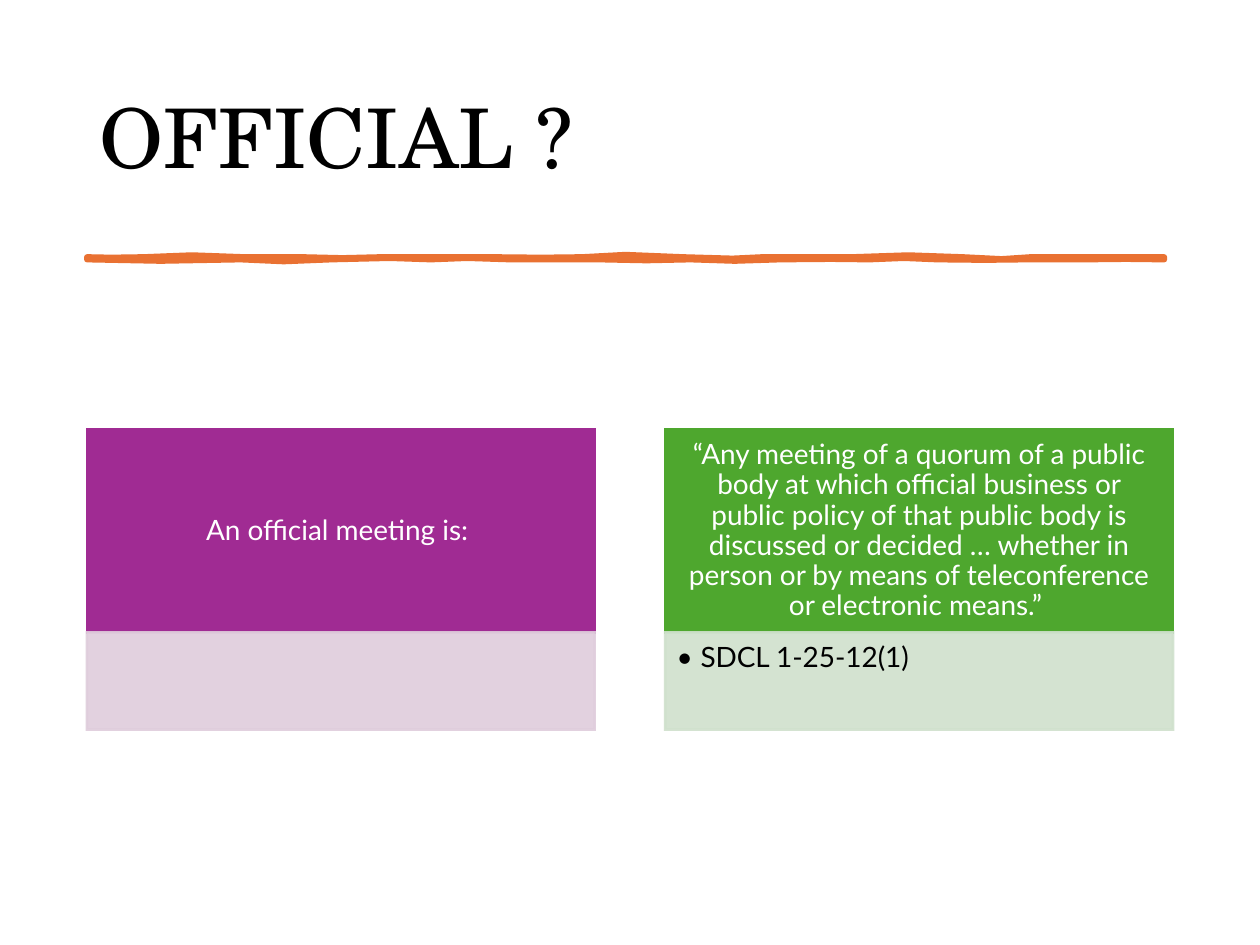
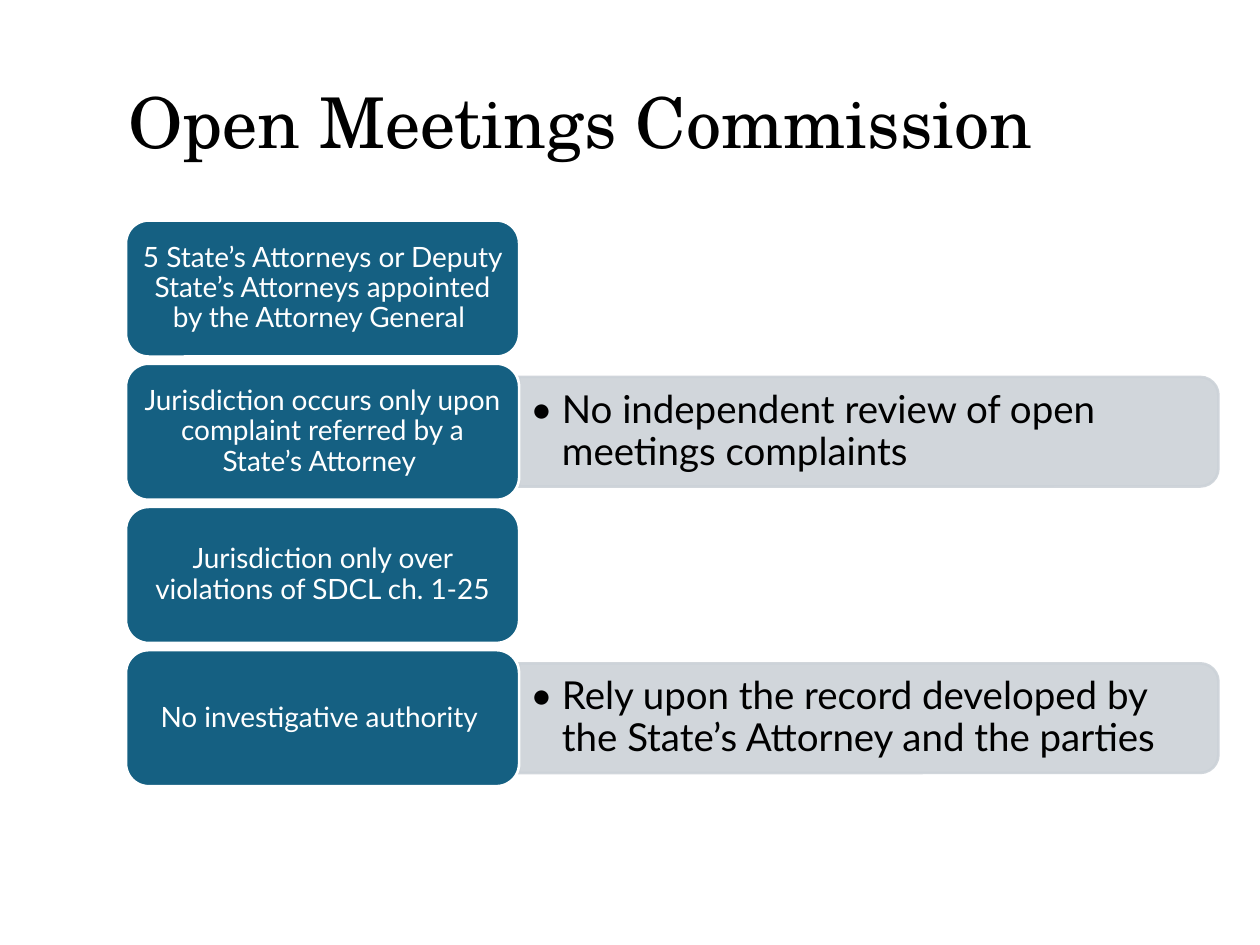
"""Build two slides on official meetings and the Open Meetings Commission."""
import dataclasses

import lxml.etree
import pptx
import pptx.dml.color
import pptx.enum.shapes
import pptx.enum.text
import pptx.oxml.ns
import pptx.util

Inches = pptx.util.Inches
MSO = pptx.enum.shapes.MSO_SHAPE
ALIGN = pptx.enum.text.PP_ALIGN
ANCHOR = pptx.enum.text.MSO_ANCHOR
qn = pptx.oxml.ns.qn


@dataclasses.dataclass(frozen=True)
class Theme:
    title_font: str = "TeX Gyre Schola"
    body_font: str = "Lato"
    text: str = "000000"
    light: str = "FFFFFF"
    rule: str = "E97132"
    topic: str = "156082"
    detail: str = "CCD2D8"
    body_size: int = 16
    detail_size: int = 22
    outline: float = 1.5
    rule_width: float = 3.25
    tint_alpha: int = 90
    spacing: float = 0.9


T = Theme()

OFFICIAL = {
    "title": ("OFFICIAL ?", (0.69, 0.4, 8.62, 1.45), 47),
    "panels": [
        ("An official meeting is: ", "", "A02B93", "DFCDDC"),
        ("“Any meeting of a quorum of a public body at which official business "
         "or public policy of that public body is discussed or decided … whether "
         "in person or by means of teleconference or electronic means.” ",
         "SDCL 1-25-12(1)", "4EA72E", "D0E1CD"),
    ],
}
COMMISSION = {
    "title": ("Open Meetings Commission", (0.92, 0.58, 8.67, 0.84), 40),
    "topics": [
        ("5 State’s Attorneys or Deputy State’s Attorneys appointed by the Attorney General ", ""),
        ("Jurisdiction occurs only upon complaint referred by a State’s Attorney ",
         "No independent review of open meetings complaints"),
        ("Jurisdiction only over violations of SDCL ch. 1-25", ""),
        ("No investigative authority ",
         "Rely upon the record developed by the State’s Attorney and the parties"),
    ],
}

RULE_START = (0.69, 2.04)
RULE_TOP = [
    (0.82, 2.03, 0.92, 2.06, 1.14), (1.37, 2.02, 1.66, 2.02, 1.94),
    (2.22, 2.05, 2.2, 2.03, 2.4), (2.6, 2.05, 2.84, 2.05, 3.02),
    (3.2, 2.03, 3.62, 2.05, 3.91), (4.2, 2.03, 4.42, 2.06, 4.62),
    (4.83, 2.02, 5.06, 2.01, 5.42), (5.77, 2.07, 5.91, 2.04, 6.05),
    (6.18, 2.04, 6.5, 2.04, 6.76), (7.01, 2.04, 7.41, 2.0, 7.64),
    (7.88, 2.08, 8.04, 2.04, 8.18), (8.32, 2.04, 8.78, 2.04, 9.24),
]
RULE_BOTTOM = [
    (9.11, 2.04, 8.77, 2.07, 8.61),
    (8.45, 2.05, 8.29, 2.07, 8.15), (8.02, 2.05, 7.62, 2.08, 7.44),
    (7.26, 2.04, 7.09, 2.05, 6.9), (6.72, 2.07, 6.5, 2.04, 6.19),
    (5.88, 2.08, 5.78, 2.07, 5.48), (5.17, 2.05, 5.1, 2.09, 4.76),
    (4.42, 2.03, 4.32, 2.09, 4.05), (3.78, 2.03, 3.62, 2.06, 3.42),
    (3.22, 2.06, 3.01, 2.03, 2.63), (2.24, 2.09, 2.25, 2.07, 1.91),
    (1.57, 2.05, 0.96, 2.1, 0.69),
]


def rgb(color):
    return pptx.dml.color.RGBColor.from_string(color)


def paint(sp, fill, line, width=T.outline, alpha=100, join="miter"):
    sp.shadow.inherit = False
    sp.fill.solid()
    sp.fill.fore_color.rgb = rgb(fill)
    sp.line.color.rgb = rgb(line)
    sp.line.width = pptx.util.Pt(width)
    lxml.etree.SubElement(sp._element.spPr.find(qn("a:ln")), qn("a:" + join))
    if alpha < 100:
        for color in sp._element.spPr.iter(qn("a:srgbClr")):
            lxml.etree.SubElement(color, qn("a:alpha")).set("val", str(alpha * 1000))


def add_box(s, kind, box, fill, line, alpha=100):
    sp = s.shapes.add_shape(kind, *map(Inches, box))
    paint(sp, fill, line, alpha=alpha)
    return sp


def add_textbox(s, box):
    return s.shapes.add_textbox(*map(Inches, box))


def write(sp, text, size, color, insets, font=T.body_font, align=ALIGN.LEFT,
          anchor=ANCHOR.MIDDLE, hang=0):
    tf = sp.text_frame
    tf.word_wrap = True
    tf.vertical_anchor = anchor
    tf.margin_left, tf.margin_top, tf.margin_right, tf.margin_bottom = map(Inches, insets)
    p = tf.paragraphs[0]
    if hang:
        pPr = p._p.get_or_add_pPr()
        pPr.set("marL", str(Inches(hang)))
        pPr.set("indent", str(-Inches(hang)))
        lxml.etree.SubElement(pPr, qn("a:buFont")).set("typeface", font)
        lxml.etree.SubElement(pPr, qn("a:buChar")).set("char", "•")
    p.alignment = align
    p.line_spacing = T.spacing
    r = p.add_run()
    r.text = text
    r.font.size = pptx.util.Pt(size)
    r.font.name = font
    r.font.color.rgb = rgb(color)


def add_slide(prs, title):
    s = prs.slides.add_slide(prs.slide_layouts[6])
    text, box, size = title
    write(add_textbox(s, box), text, size, T.text, (0.1, 0.05, 0.1, 0.05), T.title_font)
    return s


def curve_points(start, curves, level, steps=2):
    points = []
    for x1, y1, x2, y2, x3 in curves:
        end = (x3, level)
        for i in range(1, steps + 1):
            t = i / steps
            u = 1 - t
            points.append(tuple(
                u**3 * a + 3 * u * u * t * b + 3 * u * t * t * c + t**3 * d
                for a, b, c, d in zip(start, (x1, y1), (x2, y2), end)))
        start = end
    return points


def add_brush_rule(s):
    corner = (9.24, 2.06)
    points = curve_points(RULE_START, RULE_TOP, RULE_START[1]) + [corner]
    points += curve_points(corner, RULE_BOTTOM, corner[1])
    fb = s.shapes.build_freeform(*map(Inches, RULE_START))
    fb.add_line_segments([(Inches(x), Inches(y)) for x, y in points])
    paint(fb.convert_to_shape(), T.rule, T.rule, T.rule_width, join="round")


def official_slide(prs):
    s = add_slide(prs, OFFICIAL["title"])
    add_brush_rule(s)
    left, top, width, head, foot, pitch = 0.69, 3.41, 4.03, 1.61, 0.77, 4.59
    for i, (text, note, color, tint) in enumerate(OFFICIAL["panels"]):
        x = left + i * pitch
        sp = add_box(s, MSO.RECTANGLE, (x, top, width, head), color, color)
        write(sp, text, T.body_size, T.light, (0.12, 0.07, 0.12, 0.07), align=ALIGN.CENTER)
        sp = add_box(s, MSO.RECTANGLE, (x, top + head, width, foot), tint, tint, T.tint_alpha)
        if note:
            write(sp, note, T.body_size, T.text, (0.09, 0.09, 0.12, 0.14),
                  anchor=ANCHOR.TOP, hang=0.19)


def commission_slide(prs):
    s = add_slide(prs, COMMISSION["title"])
    topics = COMMISSION["topics"]
    left, top, last_top, width, height = 1, 1.75, 5.16, 3.12, 1.08
    pitch = (last_top - top) / (len(topics) - 1)
    bar_w, bar_h, text_w, text_h = 5.55, 0.87, 5.5, 0.78
    bar_x = left + width
    for i, (topic, detail) in enumerate(topics):
        y = top + i * pitch
        if detail:
            mid = y + height / 2
            turned = (bar_x + (bar_w - bar_h) / 2, mid - bar_w / 2, bar_h, bar_w)
            sp = add_box(s, MSO.ROUND_2_SAME_RECTANGLE, turned, T.detail, T.detail, T.tint_alpha)
            sp.rotation = 90
            write(add_textbox(s, (bar_x, mid - text_h / 2, text_w, text_h)), detail,
                  T.detail_size, T.text, (0.09, 0.05, 0.09, 0.05), hang=0.25)
        sp = add_box(s, MSO.ROUNDED_RECTANGLE, (left, y, width, height), T.topic, T.light)
        write(sp, topic, T.body_size, T.light, (0.06, 0.03, 0.06, 0.03), align=ALIGN.CENTER)


def main():
    prs = pptx.Presentation()
    prs.slide_width, prs.slide_height = Inches(10), Inches(7.5)
    official_slide(prs)
    commission_slide(prs)
    prs.save("out.pptx")


if __name__ == "__main__":
    main()
